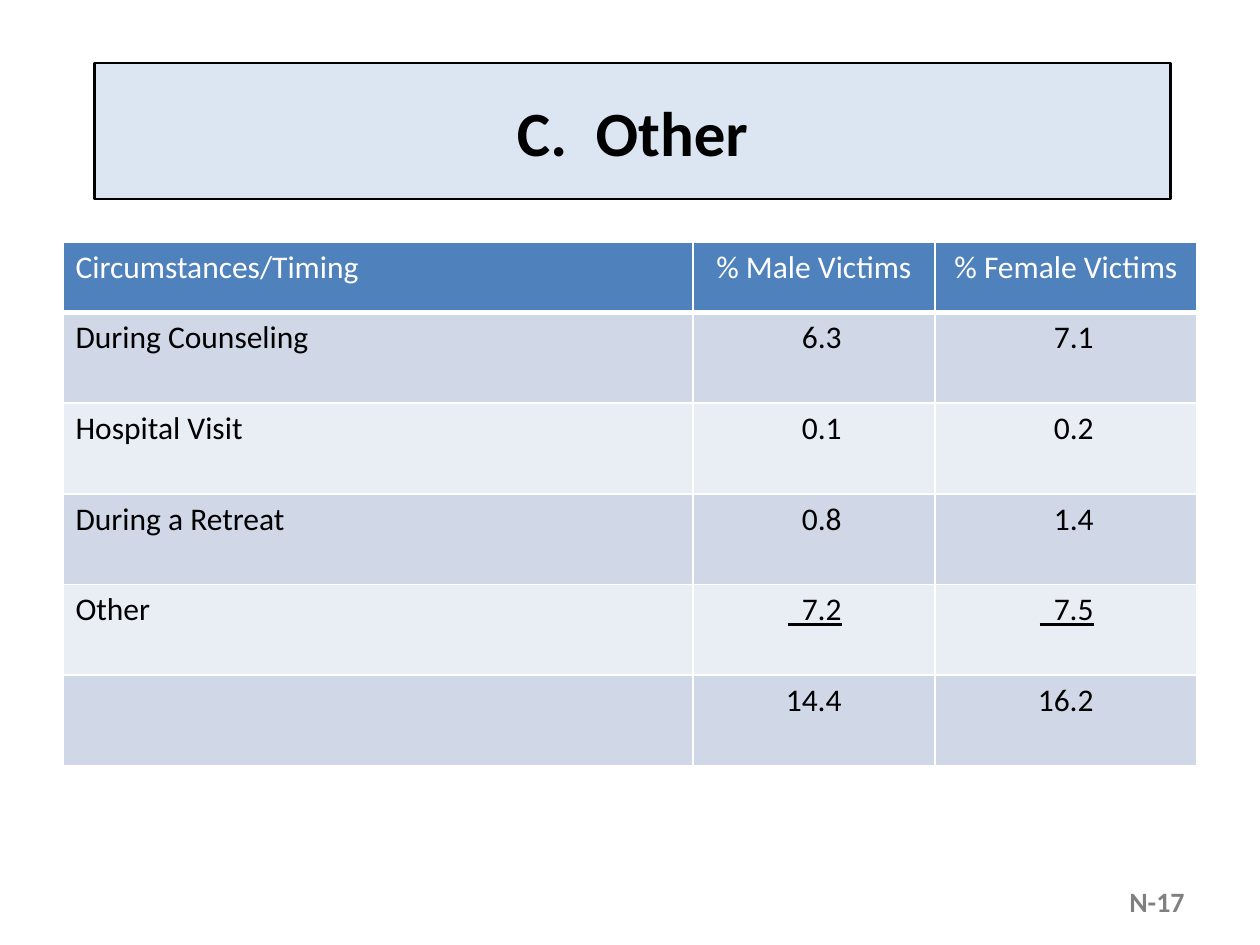
from dataclasses import dataclass

from lxml.etree import SubElement
from pptx import Presentation
from pptx.dml.color import RGBColor
from pptx.enum.shapes import MSO_SHAPE
from pptx.enum.text import MSO_ANCHOR, PP_ALIGN
from pptx.oxml.ns import qn
from pptx.util import Inches, Pt

BLACK = RGBColor(0x00, 0x00, 0x00)
WHITE = RGBColor(0xFF, 0xFF, 0xFF)
GRAY = RGBColor(0x80, 0x80, 0x80)
TITLE_FILL = RGBColor(0xDC, 0xE6, 0xF2)
HEADER_FILL = RGBColor(0x4F, 0x81, 0xBD)
BAND_FILLS = (RGBColor(0xD0, 0xD8, 0xE8), RGBColor(0xE9, 0xED, 0xF4))

FONT_NAME = "Calibri"
COLUMN_WIDTHS = (5, 1.92, 2.08)
HEADER_HEIGHT, ROW_HEIGHT = 0.56, 0.72
NUMBER_WIDTH = 0.44  # width of the widest value, "14.4"


@dataclass
class VictimRow:
    circumstance: str
    male: str
    female: str
    underlined: bool = False


HEADER = ("Circumstances/Timing", "% Male Victims", "% Female Victims")
ROWS = (
    VictimRow("During Counseling", "6.3", "7.1"),
    VictimRow("Hospital Visit", "0.1", "0.2"),
    VictimRow("During a Retreat", "0.8", "1.4"),
    # The sum line reaches over the tens place
    VictimRow("Other", "  7.2", "  7.5", underlined=True),
    VictimRow("", "14.4", "16.2"),
)


def write_text(frame, text: str, size: int, color: RGBColor,
               alignment: PP_ALIGN, bold: bool = False,
               underlined: bool = False) -> None:
    frame.word_wrap = True
    paragraph = frame.paragraphs[0]
    paragraph.text = text
    paragraph.alignment = alignment
    font = paragraph.font
    font.name, font.size, font.bold = FONT_NAME, Pt(size), bold
    font.underline = underlined
    font.color.rgb = color


def add_borders(cell, bottom_width: float = 1) -> None:
    properties = cell._tc.get_or_add_tcPr()
    for position, side in enumerate(("lnL", "lnR", "lnT", "lnB")):
        width = bottom_width if side == "lnB" else 1
        line = SubElement(properties, qn(f"a:{side}"), w=str(Pt(width)))
        fill = SubElement(line, qn("a:solidFill"))
        SubElement(fill, qn("a:srgbClr"), val=str(WHITE))
        properties.insert(position, line)


def fill_cell(cell, color: RGBColor) -> None:
    cell.fill.solid()
    cell.fill.fore_color.rgb = color


def add_title(slide) -> None:
    shape = slide.shapes.add_shape(MSO_SHAPE.RECTANGLE, Inches(0.75),
                                   Inches(0.5), Inches(8.54), Inches(1.08))
    shape.shadow.inherit = False
    shape.fill.solid()
    shape.fill.fore_color.rgb = TITLE_FILL
    shape.line.color.rgb = BLACK
    shape.line.width = Pt(1.5)
    shape.text_frame.vertical_anchor = MSO_ANCHOR.MIDDLE
    write_text(shape.text_frame, "C.  Other", 36, BLACK, PP_ALIGN.CENTER, bold=True)


def add_victim_table(slide) -> None:
    height = HEADER_HEIGHT + ROW_HEIGHT * len(ROWS)
    table = slide.shapes.add_table(
        len(ROWS) + 1, len(HEADER), Inches(0.5), Inches(1.92),
        Inches(sum(COLUMN_WIDTHS)), Inches(height)).table
    table.first_row = table.horz_banding = False
    for column, width in zip(table.columns, COLUMN_WIDTHS):
        column.width = Inches(width)
    for index, row in enumerate(table.rows):
        row.height = Inches(ROW_HEIGHT if index else HEADER_HEIGHT)

    # Header row
    for index, label in enumerate(HEADER):
        cell = table.cell(0, index)
        alignment = PP_ALIGN.CENTER if index else PP_ALIGN.LEFT
        write_text(cell.text_frame, label, 18, WHITE, alignment)
        fill_cell(cell, HEADER_FILL)
        add_borders(cell, bottom_width=3)

    # Body rows: values line up on the right, centered as a block
    for row_index, row in enumerate(ROWS, start=1):
        for index, text in enumerate((row.circumstance, row.male, row.female)):
            cell = table.cell(row_index, index)
            alignment = PP_ALIGN.LEFT
            if index:
                alignment = PP_ALIGN.RIGHT
                cell.margin_right = Inches((COLUMN_WIDTHS[index] - NUMBER_WIDTH) / 2)
            write_text(cell.text_frame, text, 18, BLACK, alignment,
                       underlined=row.underlined and index > 0)
            fill_cell(cell, BAND_FILLS[(row_index - 1) % 2])
            add_borders(cell)


def add_page_number(slide) -> None:
    text_box = slide.shapes.add_textbox(Inches(7.17), Inches(6.95),
                                        Inches(2.33), Inches(0.4))
    text_box.text_frame.vertical_anchor = MSO_ANCHOR.MIDDLE
    write_text(text_box.text_frame, "N-17", 16, GRAY, PP_ALIGN.RIGHT, bold=True)


def main() -> None:
    presentation = Presentation()
    presentation.slide_width = Inches(10)
    presentation.slide_height = Inches(7.5)
    slide = presentation.slides.add_slide(presentation.slide_layouts[6])
    add_title(slide)
    add_victim_table(slide)
    add_page_number(slide)
    presentation.save("out.pptx")


if __name__ == "__main__":
    main()
